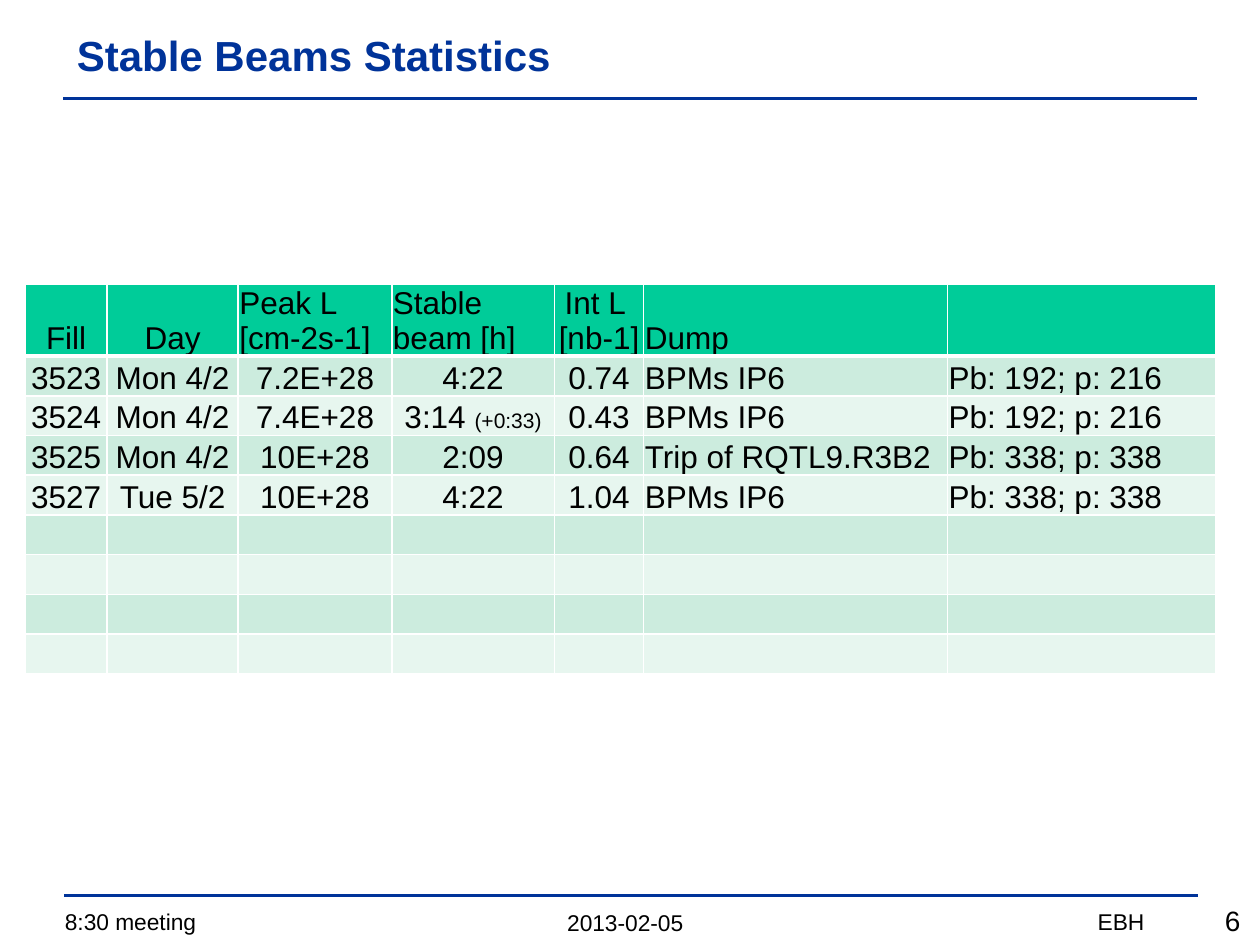
"""Build the stable beams statistics slide."""
import pptx
import pptx.dml.color
import pptx.enum.shapes
import pptx.enum.text
import pptx.oxml
import pptx.oxml.ns
import pptx.util

Pt = pptx.util.Pt
ALIGN = pptx.enum.text.PP_ALIGN
ANCHOR = pptx.enum.text.MSO_ANCHOR
NAVY, BLACK, WHITE = "003399", "000000", "FFFFFF"
HEADER_FILL, BAND_FILLS = "00CC99", ("CCECDE", "E7F6EF")
COLUMN_WIDTHS = (46.8, 74.9, 87.8, 92.9, 51.1, 173.5, 153.4)
HEADERS = ("Fill", "Day", "Peak L\n[cm-2s-1]", "Stable beam [h]", "Int L \n[nb-1]", "Dump", "")
CENTRED_HEADERS = (0, 1, 4)
CENTRED_VALUES = range(5)
FILLS = (
    ("3523", "Mon 4/2", "7.2E+28", "4:22", "0.74", "BPMs IP6", "Pb: 192; p: 216"),
    ("3524", "Mon 4/2", "7.4E+28", "3:14 ", "0.43", "BPMs IP6", "Pb: 192; p: 216"),
    ("3525", "Mon 4/2", "10E+28", "2:09", "0.64", "Trip of RQTL9.R3B2", "Pb: 338; p: 338"),
    ("3527", "Tue 5/2", "10E+28", "4:22", "1.04", "BPMs IP6", "Pb: 338; p: 338"),
)
SPARE_ROWS = 4


def rgb(color):
    """Return a colour from its hex string."""
    return pptx.dml.color.RGBColor.from_string(color)


def style_paragraph(p, size, color=BLACK, align=ALIGN.LEFT, bold=False):
    """Set the alignment and font of a paragraph."""
    p.alignment = align
    p.font.name = "Arial"
    p.font.size = Pt(size)
    p.font.bold = bold
    p.font.color.rgb = rgb(color)


def set_title(s, text):
    """Place and format the title placeholder."""
    sp = s.shapes.title
    sp.left, sp.top, sp.width, sp.height = Pt(36.7), Pt(6.5), Pt(647.3), Pt(49)
    tf = sp.text_frame
    tf.text = text
    tf.vertical_anchor = ANCHOR.MIDDLE
    style_paragraph(tf.paragraphs[0], 24, NAVY, bold=True)


def add_rule(s, left, top):
    """Add a horizontal rule without a shadow."""
    kind = pptx.enum.shapes.MSO_CONNECTOR.STRAIGHT
    line = s.shapes.add_connector(kind, Pt(left), Pt(top), Pt(left + 648), Pt(top))
    line.line.color.rgb = rgb(NAVY)
    line.line.width = Pt(1.5)
    line._element.spPr.append(pptx.oxml.parse_xml(
        f'<a:effectLst {pptx.oxml.ns.nsdecls("a")}/>'))


def add_label(s, text, left, top, width, height, align, size=13):
    """Add a footer label."""
    sp = s.shapes.add_textbox(Pt(left), Pt(top), Pt(width), Pt(height))
    tf = sp.text_frame
    tf.word_wrap = True
    tf.text = text
    style_paragraph(tf.paragraphs[0], size, align=align)


def set_borders(cell, top, bottom):
    """Give a cell white borders, with the top and bottom widths in points."""
    tc_pr = cell._tc.get_or_add_tcPr()
    for side, width in (("L", 1), ("R", 1), ("T", top), ("B", bottom)):
        tc_pr.append(pptx.oxml.parse_xml(
            f'<a:ln{side} {pptx.oxml.ns.nsdecls("a")} w="{Pt(width)}">'
            f'<a:solidFill><a:srgbClr val="{WHITE}"/></a:solidFill></a:ln{side}>'))


def fill_cell(cell, text, color, align, top, bottom):
    """Write and format one table cell."""
    set_borders(cell, top, bottom)
    cell.fill.solid()
    cell.fill.fore_color.rgb = rgb(color)
    cell.margin_left = cell.margin_right = cell.margin_top = Pt(0.7)
    cell.margin_bottom = 0
    cell.vertical_anchor = ANCHOR.BOTTOM
    p = cell.text_frame.paragraphs[0]
    p.text = text
    style_paragraph(p, 18, align=align)


def add_fill_table(s):
    """Add the table of fills, with spare rows below."""
    rows = (HEADERS, *FILLS, *[("",) * len(HEADERS)] * SPARE_ROWS)
    width, height = sum(COLUMN_WIDTHS), 40 + 22.7 * (len(rows) - 1)
    frame = s.shapes.add_table(len(rows), len(HEADERS), Pt(14.4), Pt(162.5), Pt(width), Pt(height))
    table = frame.table
    table.first_row = table.horz_banding = False
    for column, column_width in zip(table.columns, COLUMN_WIDTHS):
        column.width = Pt(column_width)
    for i, row in enumerate(rows):
        table.rows[i].height = Pt(22.7 if i else 40)
        color = BAND_FILLS[(i - 1) % 2] if i else HEADER_FILL
        centred = CENTRED_VALUES if i else CENTRED_HEADERS
        for j, text in enumerate(row):
            align = ALIGN.CENTER if j in centred else ALIGN.LEFT
            fill_cell(table.cell(i, j), text, color, align, 3 if i == 1 else 1, 1 if i else 3)
    r = table.cell(2, 3).text_frame.paragraphs[0].add_run()
    r.text = "(+0:33)"
    r.font.size = Pt(12)


def main():
    """Build and save the slide."""
    prs = pptx.Presentation()
    prs.slide_width, prs.slide_height = Pt(720), Pt(540)
    s = prs.slides.add_slide(prs.slide_layouts.get_by_name("Title Only"))
    set_title(s, "Stable Beams Statistics")
    add_rule(s, 36, 56.2)
    add_fill_table(s)
    add_rule(s, 36.7, 511.6)
    add_label(s, "8:30 meeting", 30, 515, 266, 23, ALIGN.LEFT)
    add_label(s, "2013-02-05", 174.5, 516, 365.5, 23, ALIGN.CENTER)
    add_label(s, "EBH", 450.5, 515, 210.5, 23, ALIGN.RIGHT)
    add_label(s, "6", 633, 512.6, 82.8, 26.6, ALIGN.RIGHT, 16)
    prs.save("out.pptx")


if __name__ == "__main__":
    main()
